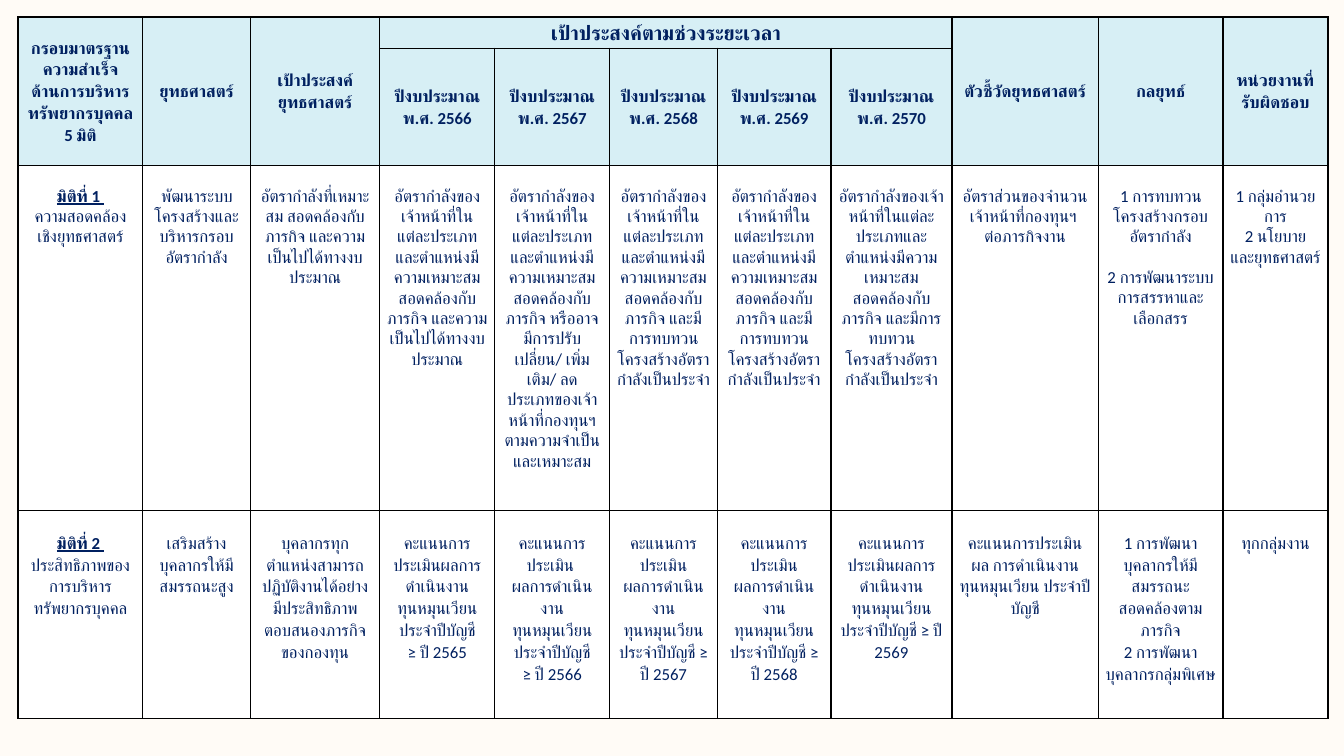
from lxml import etree
from pptx import Presentation
from pptx.dml.color import RGBColor
from pptx.enum.lang import MSO_LANGUAGE_ID
from pptx.enum.text import MSO_ANCHOR, PP_ALIGN
from pptx.oxml.ns import qn
from pptx.util import Inches, Pt

CENTER = PP_ALIGN.CENTER
MIDDLE, TOP = MSO_ANCHOR.MIDDLE, MSO_ANCHOR.TOP
THAI = MSO_LANGUAGE_ID.THAI
FONT = "Calibri"
NAVY, BLACK, WHITE = "002060", "000000", "FFFFFF"
HEADER_BLUE, CREAM = "D7EFF5", "FFFBF6"

COLUMN_WIDTHS = [1.03, 0.89, 1.07, 0.95, 0.95, 0.89, 0.94, 1, 1.21, 1.03, 0.87]
ROW_HEIGHTS = [0.26, 0.97, 2.85, 1.72]
FIRST_YEAR_COLUMN, LAST_YEAR_COLUMN = 3, 7
YEARS = range(2566, 2571)

HEADINGS = {
    0: "กรอบมาตรฐานความสำเร็จ\nด้านการบริหารทรัพยากรบุคคล 5 มิติ",
    1: "ยุทธศาสตร์",
    2: "เป้าประสงค์ยุทธศาสตร์",
    8: "ตัวชี้วัดยุทธศาสตร์",
    9: "กลยุทธ์",
    10: "หน่วยงานที่รับผิดชอบ",
}
PERIOD_HEADING = "เป้าประสงค์ตามช่วงระยะเวลา"

WORKFORCE = "อัตรากำลังของเจ้าหน้าที่ในแต่ละประเภทและตำแหน่งมีความเหมาะสม สอดคล้องกับภารกิจ "
WORKFORCE_REVIEW = WORKFORCE + "และมีการทบทวนโครงสร้างอัตรากำลังเป็นประจำ"
SCORE = "คะแนนการประเมิน"
RESULT = "ผลการดำเนินงานทุนหมุนเวียน ประจำปีบัญชี"

ALIGNMENT_ROW = [
    ["มิติที่ 1 ", "ความสอดคล้องเชิงยุทธศาสตร์"],
    ["พัฒนาระบบโครงสร้างและบริหารกรอบอัตรากำลัง"],
    ["อัตรากำลังที่เหมาะสม สอดคล้องกับภารกิจ และความเป็นไปได้ทางงบประมาณ"],
    [WORKFORCE + "และความเป็นไปได้ทางงบประมาณ"],
    [WORKFORCE + "หรืออาจมีการปรับเปลี่ยน/ เพิ่มเติม/ ลด "
     "ประเภทของเจ้าหน้าที่กองทุนฯ ตามความจำเป็นและเหมาะสม"],
    [WORKFORCE_REVIEW],
    [WORKFORCE_REVIEW],
    [WORKFORCE_REVIEW],
    ["อัตราส่วนของจำนวนเจ้าหน้าที่กองทุนฯ \nต่อภารกิจงาน"],
    ["1 การทบทวนโครงสร้างกรอบอัตรากำลัง", "2 การพัฒนาระบบการสรรหาและเลือกสรร"],
    ["1 กลุ่มอำนวยการ", "2 นโยบาย\nและยุทธศาสตร์"],
]
EFFICIENCY_ROW = [
    ["มิติที่ 2 ", "ประสิทธิภาพของการบริหารทรัพยากรบุคคล"],
    ["เสริมสร้างบุคลากรให้มีสมรรถนะสูง"],
    ["บุคลากรทุกตำแหน่งสามารถปฏิบัติงานได้อย่างมีประสิทธิภาพ ตอบสนองภารกิจของกองทุน"],
    [f"{SCORE}{RESULT}\n≥ ปี 2565"],
    [f"{SCORE} \n{RESULT}\n≥ ปี 2566"],
    [f"{SCORE}\n{RESULT} ≥ ปี 2567"],
    [f"{SCORE}\n{RESULT} ≥ ปี 2568"],
    [f"{SCORE}{RESULT} ≥ ปี 2569"],
    ["คะแนนการประเมินผล การดำเนินงานทุนหมุนเวียน ประจำปีบัญชี"],
    ["1 การพัฒนาบุคลากรให้มีสมรรถนะสอดคล้องตามภารกิจ", "2 การพัฒนาบุคลากรกลุ่มพิเศษ"],
    ["ทุกกลุ่มงาน"],
]


def color(value):
    """Return the colour for a hex string."""
    return RGBColor.from_string(value)


def add_borders(cell):
    """Draw a thin black line on each side of a cell."""
    properties = cell._tc.get_or_add_tcPr()
    for side in ("lnL", "lnR", "lnT", "lnB"):
        line = etree.SubElement(properties, qn(f"a:{side}"), w=str(Pt(1)))
        fill = etree.SubElement(line, qn("a:solidFill"))
        etree.SubElement(fill, qn("a:srgbClr"), val=BLACK)


def format_cell(cell, fill, anchor, top=0):
    """Set the borders, fill, margins and anchor of a cell."""
    add_borders(cell)
    cell.fill.solid()
    cell.fill.fore_color.rgb = color(fill)
    cell.margin_left = cell.margin_right = Inches(0.06)
    cell.margin_top, cell.margin_bottom = Inches(top), 0
    cell.vertical_anchor = anchor


def format_paragraph(paragraph, size=10, bold=False, underline=False, spacing=1.07):
    """Centre a paragraph and set the font of its runs."""
    paragraph.alignment = CENTER
    paragraph.line_spacing = spacing
    for run in paragraph.runs:
        font = run.font
        font.name, font.size = FONT, Pt(size)
        font.bold, font.underline = bold, underline
        font.color.rgb = color(NAVY)
        font.language_id = THAI
        etree.SubElement(font._element, qn("a:cs"), typeface=FONT)


def write_heading(cell, text, size=10):
    """Write a bold heading into a cell."""
    paragraph = cell.text_frame.paragraphs[0]
    paragraph.text = text
    format_paragraph(paragraph, size, bold=True)


def write_header(table):
    """Merge the header cells and write the headings."""
    for row in range(2):
        for cell in table.rows[row].cells:
            format_cell(cell, HEADER_BLUE, MIDDLE)
    for column, text in HEADINGS.items():
        table.cell(0, column).merge(table.cell(1, column))
        write_heading(table.cell(0, column), text)
    period = table.cell(0, FIRST_YEAR_COLUMN)
    period.merge(table.cell(0, LAST_YEAR_COLUMN))
    write_heading(period, PERIOD_HEADING, 12)
    for column, year in enumerate(YEARS, FIRST_YEAR_COLUMN):
        write_heading(table.cell(1, column), f"ปีงบประมาณ พ.ศ. {year}")


def write_dimension(row, contents, top, spacing):
    """Write one dimension of the plan into a table row."""
    for column, (cell, texts) in enumerate(zip(row.cells, contents)):
        format_cell(cell, WHITE, TOP, top)
        frame = cell.text_frame
        for index, text in enumerate(texts):
            paragraph = frame.add_paragraph() if index else frame.paragraphs[0]
            paragraph.text = text
            is_title = column == 0 and index == 0
            format_paragraph(paragraph, 10, is_title, is_title, spacing)


def add_plan_table(slide):
    """Add the empty plan table with its column and row sizes."""
    frame = slide.shapes.add_table(
        len(ROW_HEIGHTS), len(COLUMN_WIDTHS), Inches(0.15), Inches(0.14),
        Inches(sum(COLUMN_WIDTHS)), Inches(sum(ROW_HEIGHTS)))
    table = frame.table
    table.first_row = table.horz_banding = False
    for column, width in zip(table.columns, COLUMN_WIDTHS):
        column.width = Inches(width)
    for row, height in zip(table.rows, ROW_HEIGHTS):
        row.height = Inches(height)
    return table


def main():
    """Build the slide with the strategic plan table."""
    presentation = Presentation()
    presentation.slide_width = Inches(11.11)
    presentation.slide_height = Inches(6.25)
    slide = presentation.slides.add_slide(presentation.slide_layouts[6])
    slide.background.fill.solid()
    slide.background.fill.fore_color.rgb = color(CREAM)
    table = add_plan_table(slide)
    write_header(table)
    write_dimension(table.rows[2], ALIGNMENT_ROW, 0.17, 1.0)
    write_dimension(table.rows[3], EFFICIENCY_ROW, 0.18, 1.07)
    strategies = table.cell(2, 9).text_frame.paragraphs
    strategies[1].space_before = Pt(12)
    presentation.save("out.pptx")


if __name__ == "__main__":
    main()
